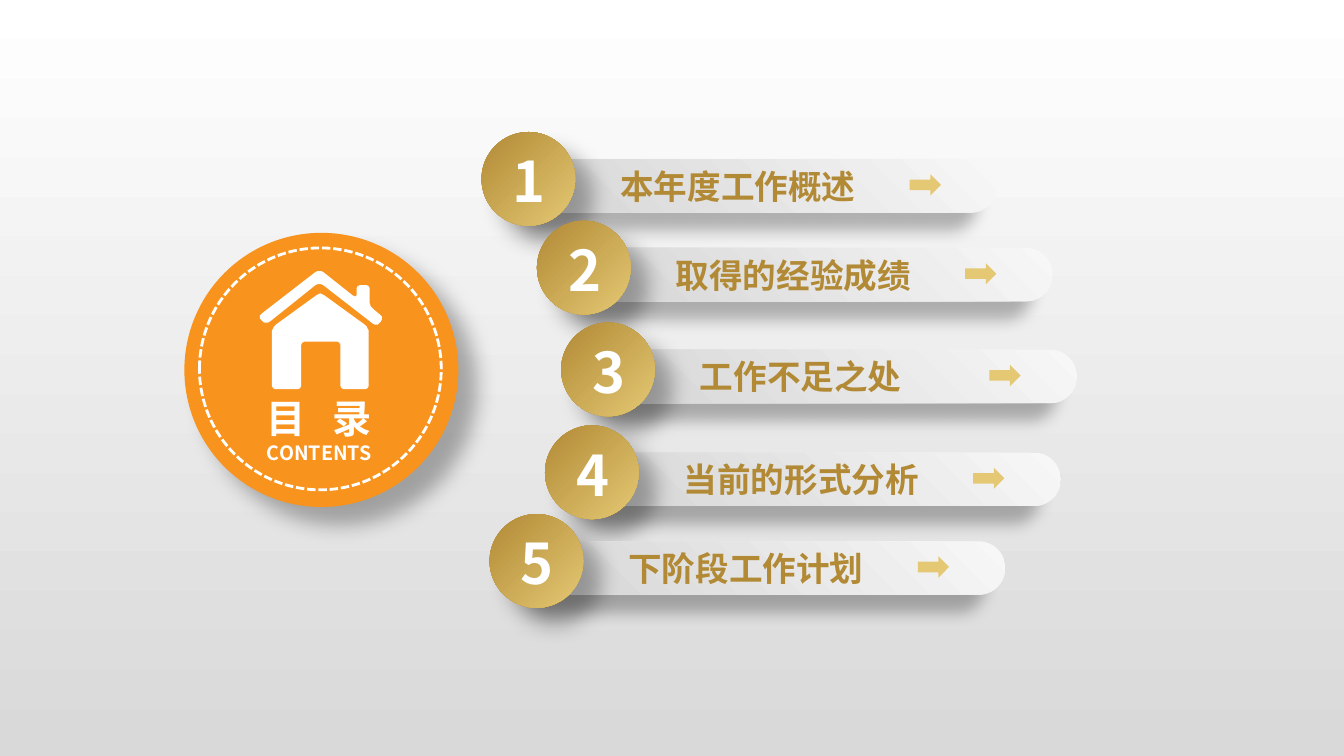
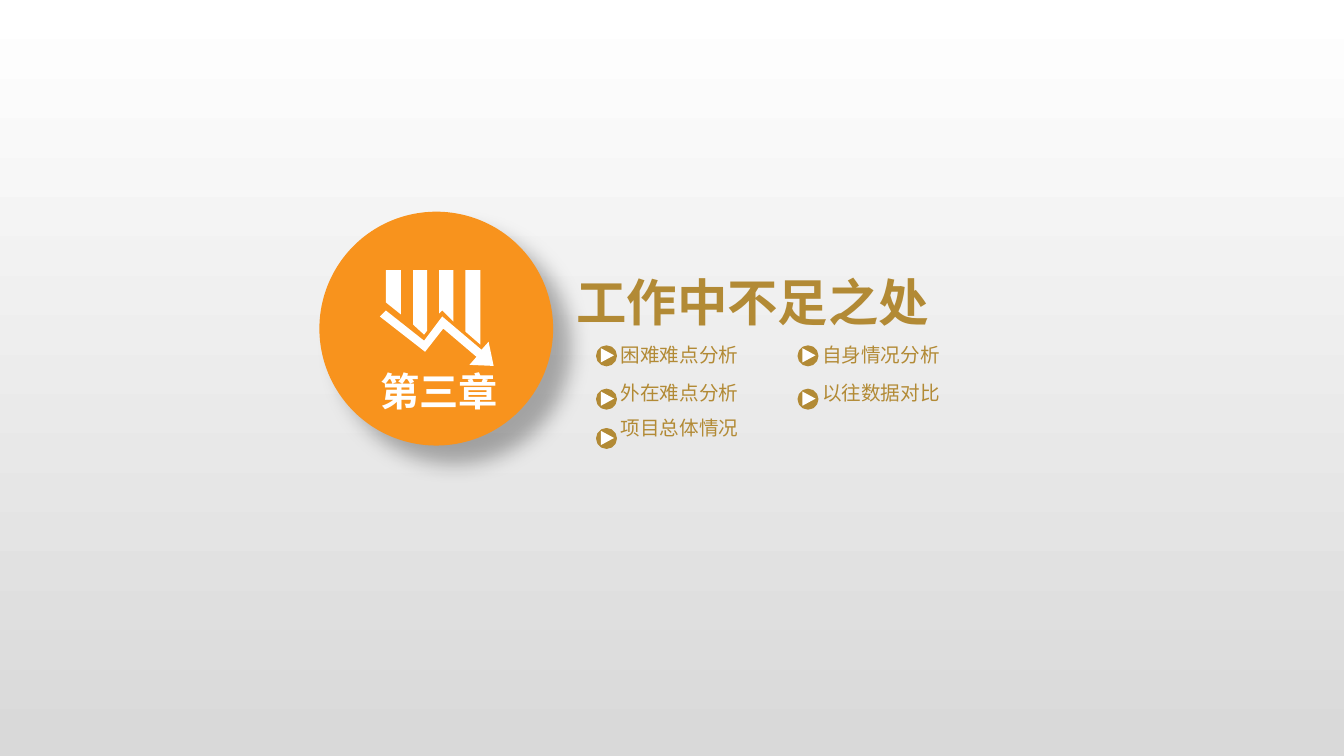
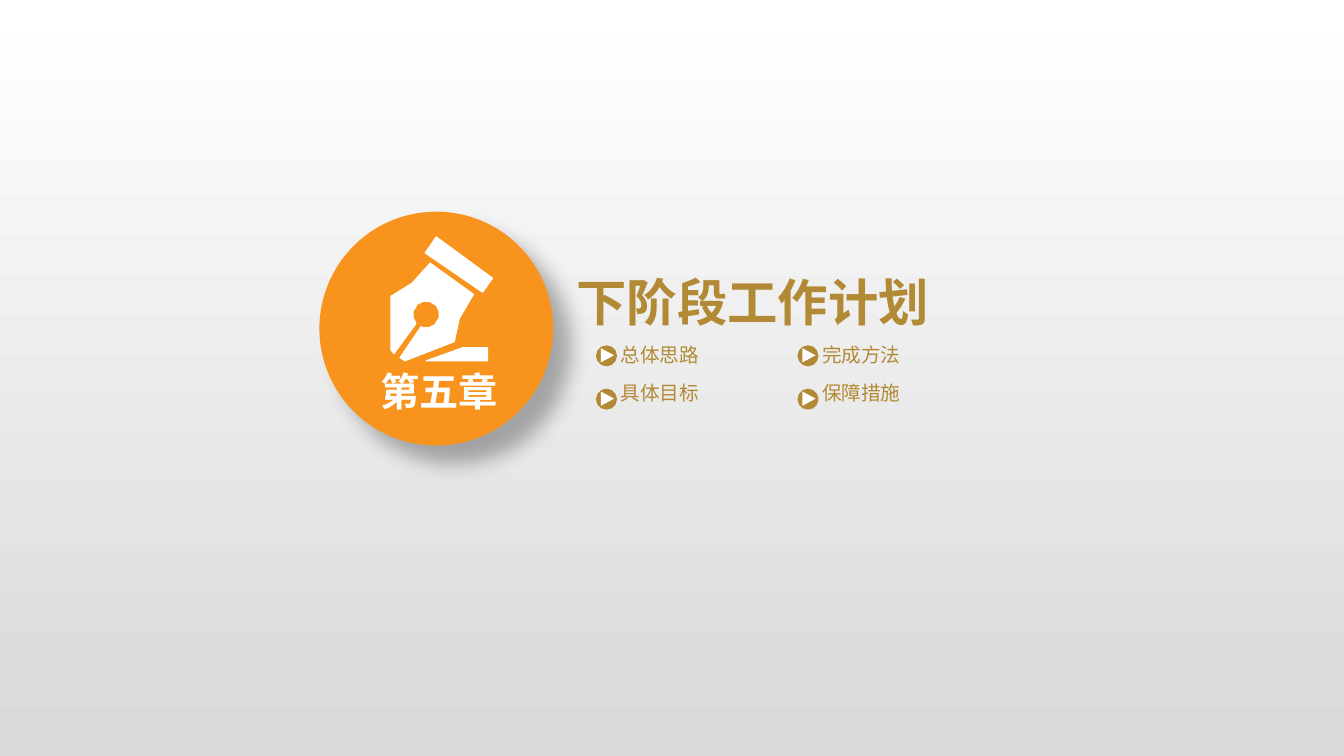
import math

from lxml import etree
from pptx import Presentation
from pptx import util as u
from pptx.dml.color import RGBColor
from pptx.enum import dml, shapes, text
from pptx.oxml.ns import qn

PX = 9144
FONT = "Noto Sans CJK SC"
WHITE = RGBColor(0xFF, 0xFF, 0xFF)
ORANGE = RGBColor(0xF8, 0x93, 0x1D)
GOLD = RGBColor(0xB2, 0x8A, 0x35)
LIGHT_GOLD = RGBColor(0xE4, 0xC8, 0x74)
BACKDROP_GRAY = RGBColor(0xD9, 0xD9, 0xD9)
PILL_GRAY = RGBColor(0xD6, 0xD6, 0xD6)
PILL_WHITE = RGBColor(0xF7, 0xF7, 0xF7)

DISC_SHADOW = (30, 15, 18, 45)
PILL_SHADOW = (28, 11.8, 19.7, 141)

AGENDA = [
    ("本年度工作概述", 478, 131),
    ("取得的经验成绩", 533, 219),
    ("工作不足之处", 557, 320),
    ("当前的形式分析", 541, 422),
    ("下阶段工作计划", 486, 510),
]
COLUMN_LEFTS = (593, 793)
ROW_TOPS = (340, 383, 422)
LINE_HEIGHT = 28

ROOF = [(317, 267), (354, 296), (354, 283), (367, 283), (367, 304), (381, 315),
        (374, 324), (317, 280), (264, 322), (256, 314)]
WALLS = [(318, 290), (366, 325), (366, 386), (338, 386), (338, 339), (299, 339),
         (299, 386), (270, 386), (270, 325)]
DECLINE_ICON = [
    [(398, 312), (398, 268), (383, 268), (383, 300)],
    [(421, 332), (424, 328), (424, 268), (410, 268), (410, 322)],
    [(450, 319), (450, 268), (436, 268), (436, 311), (439, 308)],
    [(477, 342), (477, 268), (462, 268), (462, 329)],
    [(490, 363), (485, 339), (478, 347), (439, 314), (421, 338), (383, 308),
     (377, 314), (422, 349), (440, 326), (473, 354), (466, 362)],
]


def scaled(*lengths):
    return [u.Emu(length * PX) for length in lengths]


def set_gradient(fill, start, end, angle, end_position=1):
    fill.gradient()
    fill.gradient_angle = 360 - angle
    for stop, color, position in zip(fill.gradient_stops, (start, end), (0, end_position)):
        stop.color.rgb = color
        stop.position = position


def set_corner_gradient(shape, start, end):
    set_gradient(shape.fill, start, end, 90)
    gradient = shape._element.spPr.find(qn("a:gradFill"))
    gradient.remove(gradient.find(qn("a:lin")))
    circle = etree.SubElement(gradient, qn("a:path"), path="circle")
    etree.SubElement(circle, qn("a:fillToRect"), l="0", t="100000", r="100000", b="0")


def cast_shadow(shape, opacity, blur, distance, angle):
    effects = shape._element.spPr.find(qn("a:effectLst"))
    shadow = etree.SubElement(
        effects, qn("a:outerShdw"), blurRad=str(u.Pt(blur)), dist=str(u.Pt(distance)),
        dir=str(angle * 60000), algn="ctr", rotWithShape="0")
    color = etree.SubElement(shadow, qn("a:srgbClr"), val="000000")
    etree.SubElement(color, qn("a:alpha"), val=str(opacity * 1000))


def add_plain_shape(slide, kind, left, top, width, height, color=None):
    shape = slide.shapes.add_shape(kind, *scaled(left, top, width, height))
    shape.shadow.inherit = False
    shape.line.fill.background()
    if color is None:
        shape.fill.background()
    else:
        shape.fill.solid()
        shape.fill.fore_color.rgb = color
    return shape


def add_icon(slide, outlines):
    builder = None
    for outline in outlines:
        if builder is None:
            builder = slide.shapes.build_freeform(*outline[0], scale=PX)
        else:
            builder.move_to(*outline[0])
        builder.add_line_segments(outline[1:], close=True)
    icon = builder.convert_to_shape()
    icon.shadow.inherit = False
    icon.fill.solid()
    icon.fill.fore_color.rgb = WHITE
    icon.line.fill.background()
    return icon


def rounded(corners, radius):
    points = []
    for index, corner in enumerate(corners):
        neighbours = corners[index - 1], corners[(index + 1) % len(corners)]
        entry, leave = [
            [c + (n - c) * min(radius / math.dist(corner, neighbour), 0.5)
             for c, n in zip(corner, neighbour)]
            for neighbour in neighbours]
        for step in range(5):
            t = step / 4
            points.append(tuple(
                (1 - t) ** 2 * a + 2 * t * (1 - t) * b + t * t * c
                for a, b, c in zip(entry, corner, leave)))
    return points


def pen_outlines():
    eye = [(423 + 13 * math.cos(math.radians(angle)), 312 + 13 * math.sin(math.radians(angle)))
           for angle in range(111, -223, -9)]
    nib = [(391, 351), (388, 347), (388, 294), (409, 281), (427, 261), (470, 292),
           (456, 316), (451, 339), (402, 358), (397, 355)] + eye
    stroke = [(423, 358), (484, 358), (484, 345), (459, 345)]
    cap = [(479, 290), (489, 276), (433, 235), (422, 251)]
    return [nib, stroke, cap]


def format_paragraph(paragraph, size, color, bold=True, alignment=text.PP_ALIGN.LEFT):
    paragraph.alignment = alignment
    paragraph.line_spacing = 1.0
    paragraph.space_before = u.Pt(0)
    for run in paragraph.runs:
        run.font.size = u.Pt(size)
        run.font.bold = bold
        run.font.color.rgb = color
        run.font.name = FONT
        etree.SubElement(run._r.get_or_add_rPr(), qn("a:ea"), typeface=FONT)


def set_frame(shape, left, top, right, bottom, anchor=text.MSO_ANCHOR.MIDDLE):
    frame = shape.text_frame
    frame.auto_size = text.MSO_AUTO_SIZE.NONE
    frame.word_wrap = True
    frame.vertical_anchor = anchor
    frame.margin_left, frame.margin_top, frame.margin_right, frame.margin_bottom = scaled(
        left, top, right, bottom)
    return frame


def place(shape, left, top, width, height):
    shape.left, shape.top, shape.width, shape.height = scaled(left, top, width, height)


def place_title(slide, box, wording, sizes, color, inset=10):
    title = slide.shapes.title
    place(title, *box)
    frame = set_frame(title, inset, 5, 10, 5)
    frame.text = wording
    for paragraph, size in zip(frame.paragraphs, sizes):
        format_paragraph(paragraph, size, color)
    slide.shapes._spTree.append(title._element)
    return title


def add_disc(slide, left, top, diameter):
    disc = add_plain_shape(slide, shapes.MSO_SHAPE.OVAL, left, top, diameter, diameter, ORANGE)
    cast_shadow(disc, *DISC_SHADOW)


def add_agenda_item(slide, number, label, left, top):
    pill = add_plain_shape(slide, shapes.MSO_SHAPE.ROUNDED_RECTANGLE, left + 55, top + 27, 457, 53)
    pill.adjustments[0] = 0.5
    set_corner_gradient(pill, PILL_GRAY, PILL_WHITE)
    cast_shadow(pill, *PILL_SHADOW)
    frame = set_frame(pill, 75, 0, 0, 0)
    frame.text = label
    format_paragraph(frame.paragraphs[0], 24, GOLD)

    badge = add_plain_shape(slide, shapes.MSO_SHAPE.OVAL, left, top, 93, 93)
    set_gradient(badge.fill, GOLD, LIGHT_GOLD, 45)
    cast_shadow(badge, *DISC_SHADOW)
    frame = set_frame(badge, 2, 3, 0, 0)
    frame.text = str(number)
    format_paragraph(frame.paragraphs[0], 40, WHITE, alignment=text.PP_ALIGN.CENTER)

    add_plain_shape(slide, shapes.MSO_SHAPE.RIGHT_ARROW, left + 425, top + 42, 31, 21, LIGHT_GOLD)


def add_play_marker(slide, left, top):
    dot = add_plain_shape(slide, shapes.MSO_SHAPE.OVAL, left, top, 18, 18, GOLD)
    dot.line.color.rgb = GOLD
    dot.line.width = u.Pt(2)
    triangle = add_plain_shape(
        slide, shapes.MSO_SHAPE.ISOSCELES_TRIANGLE, left + 3, top + 2, 14, 13, WHITE)
    triangle.rotation = 90


def fill_topic_column(slide, body, left, topics):
    place(body, left + 23, ROW_TOPS[0], 134, 120)
    frame = set_frame(body, 0, 0, 0, 0, text.MSO_ANCHOR.TOP)
    frame.text = "\n".join(topics)
    for row, paragraph in enumerate(frame.paragraphs):
        format_paragraph(paragraph, 14, GOLD, bold=False)
        if row:
            gap = ROW_TOPS[row] - ROW_TOPS[row - 1] - LINE_HEIGHT
            paragraph.space_before = u.Emu(gap * PX)
        properties = paragraph._p.get_or_add_pPr()
        properties.set("marL", "0")
        properties.set("indent", "0")
        etree.SubElement(properties, qn("a:buNone"))
        add_play_marker(slide, left, ROW_TOPS[row] + 4)


def add_contents_slide(presentation):
    slide = presentation.slides.add_slide(presentation.slide_layouts[5])
    add_disc(slide, 183, 231, 272)
    add_icon(slide, [rounded(WALLS, 5)])
    add_icon(slide, [rounded(ROOF, 5)])
    title = place_title(slide, (255, 380, 148, 92), "目 录\nCONTENTS", (28, 14), WHITE)
    heading = title.text_frame.paragraphs[0].runs[0]
    heading._r.get_or_add_rPr().set("spc", "630")
    ring = add_plain_shape(slide, shapes.MSO_SHAPE.OVAL, 198, 246, 240, 240)
    ring.line.color.rgb = WHITE
    ring.line.width = u.Pt(2)
    ring.line.dash_style = dml.MSO_LINE.SQUARE_DOT
    for number, (label, left, top) in enumerate(AGENDA, 1):
        add_agenda_item(slide, number, label, left, top)


def add_chapter_slide(presentation, chapter, heading, columns, outlines):
    slide = presentation.slides.add_slide(presentation.slide_layouts[3])
    add_disc(slide, 317, 210, 232)
    chapter_box = slide.shapes.add_textbox(*scaled(368, 344, 142, 88))
    frame = set_frame(chapter_box, 10, 5, 10, 5)
    frame.text = chapter
    format_paragraph(frame.paragraphs[0], 28, WHITE)
    place_title(slide, (517, 273, 485, 52), heading, (36,), GOLD, inset=55)
    bodies = [shape for shape in slide.placeholders if shape.placeholder_format.idx > 0]
    for body, left, topics in zip(bodies, COLUMN_LEFTS, columns):
        fill_topic_column(slide, body, left, topics)
    return add_icon(slide, outlines)


def main():
    presentation = Presentation()
    presentation.slide_width, presentation.slide_height = scaled(1334, 750)
    set_gradient(presentation.slide_master.background.fill, WHITE, BACKDROP_GRAY, 90, 0.99)

    add_contents_slide(presentation)
    add_chapter_slide(
        presentation, "第三章", "工作中不足之处",
        [("困难难点分析", "外在难点分析", "项目总体情况"), ("自身情况分析", "以往数据对比")],
        DECLINE_ICON)
    pen = add_chapter_slide(
        presentation, "第五章", "下阶段工作计划",
        [("总体思路", "具体目标"), ("完成方法", "保障措施")],
        pen_outlines())
    pen.line.color.rgb = WHITE
    pen.line.width = u.Pt(0.75)

    presentation.save("out.pptx")


if __name__ == "__main__":
    main()
